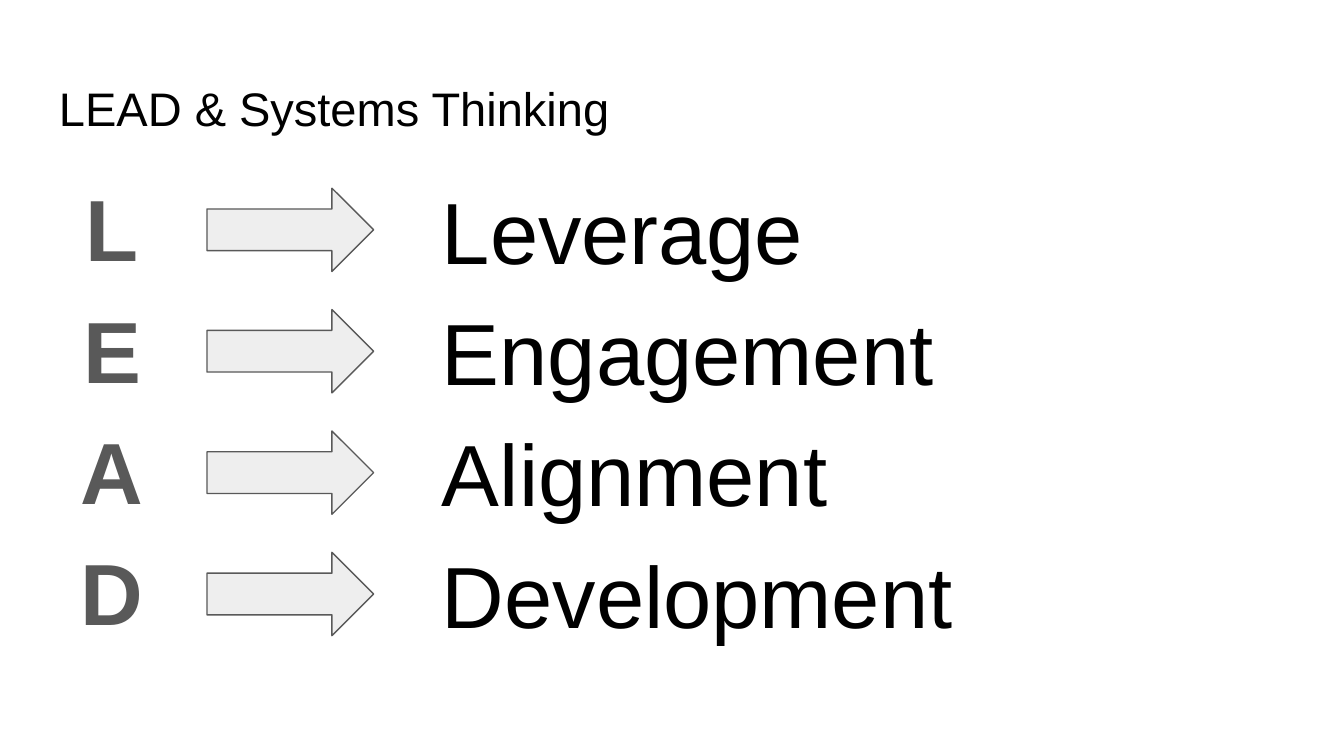
from dataclasses import dataclass

from pptx import Presentation
from pptx.dml.color import RGBColor
from pptx.enum.shapes import MSO_SHAPE
from pptx.enum.text import MSO_ANCHOR, PP_ALIGN
from pptx.util import Inches, Pt


@dataclass(frozen=True)
class Theme:
    font: str = "Arial"
    black: RGBColor = RGBColor(0x00, 0x00, 0x00)
    gray: RGBColor = RGBColor(0x59, 0x59, 0x59)
    light: RGBColor = RGBColor(0xEE, 0xEE, 0xEE)
    title_size: Pt = Pt(25.2)
    body_size: Pt = Pt(46.5)


THEME = Theme()
WORDS = ["Leverage", "Engagement", "Alignment", "Development"]
ROW_HEIGHT = 0.98


def set_attrs(target, values):
    for name, value in values.items():
        setattr(target, name, value)


def add_text(s, box, lines, size, color, bold=False, frame=None, para=None, gap=0):
    tf = s.shapes.add_textbox(*map(Inches, box)).text_frame
    margins = {f"margin_{side}": Inches(0.1) for side in ("left", "top", "right", "bottom")}
    set_attrs(tf, {"word_wrap": True, **margins, **(frame or {})})
    for i, line in enumerate(lines):
        p = tf.add_paragraph() if i else tf.paragraphs[0]
        set_attrs(p, {"space_before": Pt(gap if i else 0), **(para or {})})
        r = p.add_run()
        r.text = line
        set_attrs(r.font, {"name": THEME.font, "size": size, "bold": bold})
        r.font.color.rgb = color


def add_title(s, box):
    add_text(s, box, ["LEAD & Systems Thinking"], THEME.title_size, THEME.black,
             frame={"vertical_anchor": MSO_ANCHOR.MIDDLE})


def add_initials(s, box):
    add_text(s, box, [word[0] for word in WORDS], THEME.body_size, THEME.gray, bold=True,
             para={"alignment": PP_ALIGN.CENTER, "line_spacing": 0.95}, gap=12)


def add_arrow(s, box):
    sp = s.shapes.add_shape(MSO_SHAPE.RIGHT_ARROW, *map(Inches, box))
    sp.shadow.inherit = False
    sp.fill.solid()
    sp.fill.fore_color.rgb = THEME.light
    sp.line.color.rgb = THEME.gray
    sp.line.width = Pt(0.75)


def add_meanings(s, box):
    left, top, width, height = box
    pitch = (height - ROW_HEIGHT) / (len(WORDS) - 1)
    for i, word in enumerate(WORDS):
        y = top + i * pitch
        add_arrow(s, (left, y + 0.18, 1.24, 0.62))
        add_text(s, (left + 1.65, y, width - 1.65, ROW_HEIGHT), [word],
                 THEME.body_size, THEME.black)


def main():
    prs = Presentation()
    set_attrs(prs, {"slide_width": Inches(10), "slide_height": Inches(10) * 9 // 16})
    s = prs.slides.add_slide(prs.slide_layouts[6])
    add_title(s, (0.34, 0.49, 9.32, 0.63))
    add_initials(s, (0.34, 1.26, 0.99, 3.74))
    add_meanings(s, (1.54, 1.22, 8.37, 3.69))
    prs.save("out.pptx")


if __name__ == "__main__":
    main()
